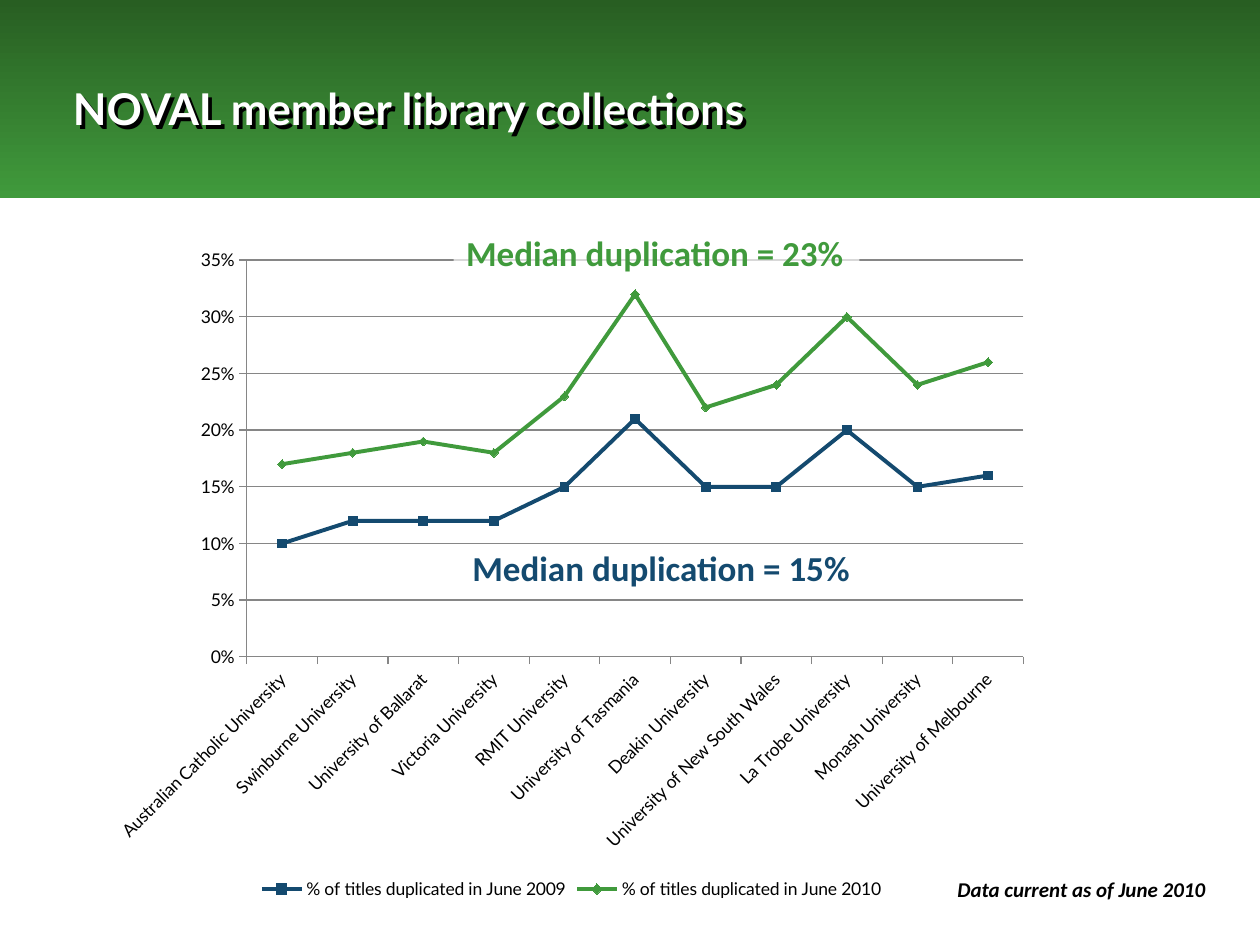
import lxml.etree
import pptx
import pptx.chart.data
import pptx.dml.color
import pptx.enum.chart
import pptx.enum.shapes
import pptx.enum.text
import pptx.oxml
import pptx.oxml.ns
import pptx.util

Inches = pptx.util.Inches
Pt = pptx.util.Pt
qn = pptx.oxml.ns.qn
GREEN, NAVY, BLACK, WHITE, GREY = "409A3C", "144A6F", "000000", "FFFFFF", "868686"


def color(value):
    return pptx.dml.color.RGBColor.from_string(value)


def write(shape, text, size, font, hue, spacing=None, wrap=False):
    frame = shape.text_frame
    frame.word_wrap = wrap
    frame.vertical_anchor = pptx.enum.text.MSO_ANCHOR.MIDDLE if wrap else pptx.enum.text.MSO_ANCHOR.TOP
    if not wrap:
        frame.auto_size = pptx.enum.text.MSO_AUTO_SIZE.SHAPE_TO_FIT_TEXT
    frame.text = text
    paragraph = frame.paragraphs[0]
    paragraph.alignment = pptx.enum.text.PP_ALIGN.LEFT
    paragraph.line_spacing = spacing
    run = paragraph.runs[0]
    run.font.size = Pt(size)
    run.font.name = font
    run.font.bold = True
    run.font.color.rgb = color(hue)
    return run


deck = pptx.Presentation()
deck.slide_width, deck.slide_height = Inches(10), Inches(7.5)
slide = deck.slides.add_slide(deck.slide_layouts[6])
shapes = slide.shapes
rectangle = pptx.enum.shapes.MSO_SHAPE.RECTANGLE

banner = shapes.add_shape(rectangle, 0, 0, Inches(10), Inches(1.57))
banner.shadow.inherit = False
banner.line.fill.background()
banner.fill.gradient()
banner.fill.gradient_angle = 270
for stop, position, hue in zip(banner.fill.gradient_stops, (0, 1), ("285E22", GREEN)):
    stop.position = position
    stop.color.rgb = color(hue)

title = shapes.add_textbox(Inches(0.48), Inches(0.16), Inches(8.11), Inches(1.4))
write(title, "NOVAL member library collections", 25, "Lato", WHITE, wrap=True)
title._element.spPr.append(pptx.oxml.parse_xml(
    '<a:effectLst xmlns:a="http://schemas.openxmlformats.org/drawingml/2006/main">'
    '<a:outerShdw dist="38100" dir="2700000" algn="tl"><a:srgbClr val="000000"/></a:outerShdw>'
    '</a:effectLst>'))

duplication = pptx.chart.data.CategoryChartData(number_format="0%")
duplication.categories = [
    "Australian Catholic University", "Swinburne University", "University of Ballarat",
    "Victoria University", "RMIT University", "University of Tasmania", "Deakin University",
    "University of New South Wales", "La Trobe University", "Monash University",
    "University of Melbourne"]
duplication.add_series("% of titles duplicated in June 2009",
                       [0.1, 0.12, 0.12, 0.12, 0.15, 0.21, 0.15, 0.15, 0.2, 0.15, 0.16])
duplication.add_series("% of titles duplicated in June 2010",
                       [0.17, 0.18, 0.19, 0.18, 0.23, 0.32, 0.22, 0.24, 0.3, 0.24, 0.26])
chart = shapes.add_chart(pptx.enum.chart.XL_CHART_TYPE.LINE_MARKERS, Inches(0.79), Inches(1.88),
                         Inches(7.49), Inches(5.3), duplication).chart
chart.has_title = False
chart.font.size = Pt(10)
chart.font.name = "Lato"
chart.font.color.rgb = color(BLACK)
chart.has_legend = True
chart.legend.position = pptx.enum.chart.XL_LEGEND_POSITION.BOTTOM
chart.legend.include_in_layout = False

universities, share = chart.category_axis, chart.value_axis
share.minimum_scale, share.maximum_scale, share.major_unit = 0, 0.35, 0.05
share.has_major_gridlines = True
share.tick_labels.number_format = "0%"
share.tick_labels.number_format_is_linked = False
for axis in (universities, share):
    axis.major_tick_mark = pptx.enum.chart.XL_TICK_MARK.OUTSIDE
    axis.format.line.color.rgb = color(GREY)
    axis.format.line.width = Pt(0.75)
share.major_gridlines.format.line.color.rgb = color(GREY)
share.major_gridlines.format.line.width = Pt(0.75)
universities.tick_labels.font.size = Pt(10)
universities._element.find(qn("c:txPr")).find(qn("a:bodyPr")).set("rot", "-2700000")

plot = chart.plots[0]
plot.vary_by_categories = False
markers = pptx.enum.chart.XL_MARKER_STYLE
for series, hue, marker in zip(plot.series, (NAVY, GREEN), (markers.SQUARE, markers.DIAMOND)):
    series.smooth = False
    series.format.line.color.rgb = color(hue)
    series.format.line.width = Pt(2.25)
    series.marker.style = marker
    series.marker.size = 5
    series.marker.format.fill.solid()
    series.marker.format.fill.fore_color.rgb = color(hue)
    series.marker.format.line.color.rgb = color(hue)

plot_area = plot._element.getparent()
for previous in plot_area.findall(qn("c:layout")):
    plot_area.remove(previous)
layout = lxml.etree.Element(qn("c:layout"))
plot_area.insert(0, layout)
manual = lxml.etree.SubElement(layout, qn("c:manualLayout"))
for tag, value in (("layoutTarget", "inner"), ("xMode", "edge"), ("yMode", "edge"),
                   ("x", "0.156"), ("y", "0.035"), ("w", "0.823"), ("h", "0.594")):
    lxml.etree.SubElement(manual, qn("c:" + tag)).set("val", value)

median_2009 = shapes.add_textbox(Inches(3.65), Inches(4.22), Inches(3.22), Inches(0.5))
write(median_2009, "Median duplication = 15%", 20, "Calibri", NAVY, 1.2)

median_2010 = shapes.add_shape(rectangle, Inches(3.6), Inches(1.72), Inches(3.22), Inches(0.5))
median_2010.shadow.inherit = False
median_2010.line.fill.background()
median_2010.fill.solid()
median_2010.fill.fore_color.rgb = color(WHITE)
white_fill = median_2010._element.spPr.find(qn("a:solidFill"))
lxml.etree.SubElement(white_fill[0], qn("a:alpha")).set("val", "68000")
write(median_2010, "Median duplication = 23%", 20, "Calibri", GREEN, 1.2)

data_date = shapes.add_textbox(Inches(7.5), Inches(6.87), Inches(2.2), Inches(0.33))
write(data_date, "Data current as of June 2010", 12, "Calibri", BLACK, 1.2).font.italic = True

deck.save("out.pptx")
